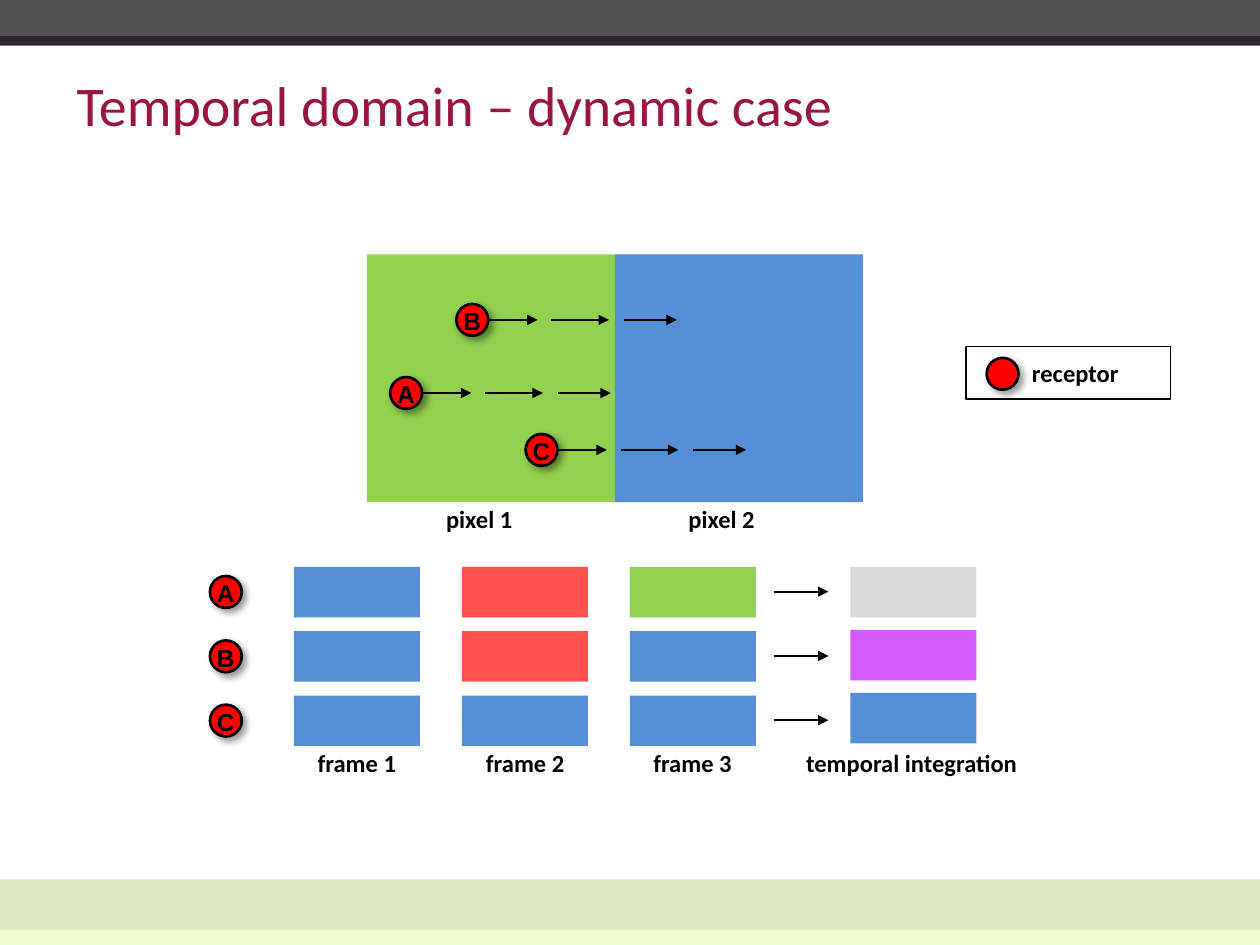
from lxml.etree import SubElement
from pptx import Presentation
from pptx.dml.color import RGBColor
from pptx.enum.shapes import MSO_CONNECTOR, MSO_SHAPE
from pptx.enum.text import MSO_ANCHOR as Anchor, MSO_AUTO_SIZE as AutoSize, PP_ALIGN as Align
from pptx.oxml import parse_xml
from pptx.oxml.ns import nsdecls, qn
from pptx.util import Pt

THEME = {
    "green": "92D050", "blue": "558ED5", "red": "FF5050",
    "grey": "D9D9D9", "violet": "D45BFF",
    "receptor": "FF0000", "ink": "000000", "title": "99173C",
    "top": "515152", "top edge": "2E2633", "base": "DCE9BE", "base edge": "EFFFCD",
    "title size": 32, "label size": 14,
    "text font": "Calibri", "letter font": "Arial",
}

TITLE = "Temporal domain – dynamic case"
LEGEND = "receptor"
BANDS = [("base", 502.5, 31.9), ("base edge", 531.4, 8.6),
         ("top", 0, 20.9), ("top edge", 20.6, 5.5)]  # colour, top, height
PIXELS = [("pixel 1", "green", 252), ("pixel 2", "blue", 390.5)]  # label left
FRAMES = [("frame 1", 178.6), ("frame 2", 274.8), ("frame 3", 370.4)]
RESULT = ("temporal integration", 457.8)
# letter, left and top of its moving receptor, colour per frame, integrated colour
RECEPTORS = [
    ("A", 223, 215.5, ["blue", "red", "green"], "grey"),
    ("B", 260.8, 173.7, ["blue", "red", "blue"], "violet"),
    ("C", 300.4, 248, ["blue", "blue", "blue"], "blue"),
]

SLIDE_W, SLIDE_H = 720, 540
PIXEL_LEFT, PIXEL_TOP, PIXEL_SIDE = 209.7, 145.3, 141.7
PIXEL_LABEL_TOP, FRAME_LABEL_TOP = 288, 427.7
DOT = 18.2
STEPS = [(DOT, 46.4), (54.2, 87.2), (95.8, 126)]  # start and end from receptor's left
FRAME_LEFT, FRAME_PITCH, RESULT_LEFT = 168, 96, 486
ROW_TOP, ROW_PITCH, RESULT_PITCH = 324, 36.75, 36
BAR_W, BAR_H = 72, 28.8
ROW_DOT_LEFT, ROW_DOT_DROP = 120, 5.2
ROW_ARROW = (442.2, 473.4)
LABEL_GAP = 2.9

prs = Presentation()
prs.slide_width, prs.slide_height = Pt(SLIDE_W), Pt(SLIDE_H)
slide = prs.slides.add_slide(prs.slide_layouts[6])


def color(name):
    return RGBColor.from_string(THEME[name])


def add_shape(parent, kind, box, fill=None, line_width=None):
    shape = parent.shapes.add_shape(kind, *map(Pt, box))
    shape.shadow.inherit = False
    if fill:
        shape.fill.solid()
        shape.fill.fore_color.rgb = color(fill)
    else:
        shape.fill.background()
    if line_width:
        shape.line.color.rgb = color("ink")
        shape.line.width = Pt(line_width)
    else:
        shape.line.fill.background()
    return shape


def add_bar(box, fill):
    return add_shape(slide, MSO_SHAPE.RECTANGLE, box, fill)


def style_text(paragraph, size, font, ink, bold):
    for run in paragraph.runs:
        run.font.size, run.font.name, run.font.bold = Pt(THEME[size]), THEME[font], bold
        run.font.color.rgb = color(ink)


def add_label(parent, text, box, font="text font", centred=False):
    """Bold label; a centred one is fixed in its box, others grow with their text."""
    label = parent.shapes.add_textbox(*map(Pt, box))
    frame = label.text_frame
    frame.margin_left = frame.margin_top = frame.margin_bottom = 0
    frame.margin_right = Pt(LABEL_GAP)
    frame.word_wrap = centred
    frame.text = text
    paragraph = frame.paragraphs[0]
    paragraph._p.get_or_add_pPr().set("marL", str(Pt(LABEL_GAP)))
    if centred:
        frame.vertical_anchor = Anchor.MIDDLE
        paragraph.alignment = Align.CENTER
    else:
        frame.auto_size = AutoSize.SHAPE_TO_FIT_TEXT
    style_text(paragraph, "label size", font, "ink", True)


def add_arrow(start, end, y, width):
    arrow = slide.shapes.add_connector(
        MSO_CONNECTOR.STRAIGHT, Pt(start), Pt(y), Pt(end), Pt(y))
    arrow.line.color.rgb = color("ink")
    arrow.line.width = Pt(width)
    SubElement(arrow.line._get_or_add_ln(), qn("a:tailEnd"), type="triangle")
    SubElement(arrow._element.spPr, qn("a:effectLst"))


def add_dot(parent, left, top):
    """Red receptor circle with a soft shadow to the lower right."""
    dot = add_shape(parent, MSO_SHAPE.OVAL, (left, top, DOT, DOT), "receptor", 1.5)
    dot._element.spPr.find(qn("a:effectLst")).append(parse_xml(
        f'<a:outerShdw {nsdecls("a")} blurRad="{Pt(4)}" dist="{Pt(3)}" dir="2700000">'
        f'<a:srgbClr val="{THEME["ink"]}"><a:alpha val="40000"/></a:srgbClr></a:outerShdw>'))


def add_receptor(letter, left, top):
    group = slide.shapes.add_group_shape()
    add_dot(group, left, top)
    add_label(group, letter, (left + 2.5, top + 1, 13, 17.3), "letter font", centred=True)


for fill, top, height in BANDS:
    add_bar((0, top, SLIDE_W, height), fill)

title = slide.shapes.add_textbox(Pt(36.7), Pt(37.4), Pt(648), Pt(44))
title.text_frame.word_wrap = True
title.text_frame.vertical_anchor = Anchor.MIDDLE
title.text_frame.text = TITLE
style_text(title.text_frame.paragraphs[0], "title size", "text font", "title", False)

for column, (name, fill, label_left) in enumerate(PIXELS):
    add_bar((PIXEL_LEFT + column * PIXEL_SIDE, PIXEL_TOP, PIXEL_SIDE, PIXEL_SIDE), fill)
    add_label(slide, name, (label_left, PIXEL_LABEL_TOP, 44.6, 17.3))

for row, (letter, left, top, frame_fills, result_fill) in enumerate(RECEPTORS):
    for start, end in STEPS:
        add_arrow(left + start, left + end, top + DOT / 2, 0.75)
    add_receptor(letter, left, top)

    row_top = ROW_TOP + row * ROW_PITCH
    add_receptor(letter, ROW_DOT_LEFT, row_top + ROW_DOT_DROP)
    for column, fill in enumerate(frame_fills):
        add_bar((FRAME_LEFT + column * FRAME_PITCH, row_top, BAR_W, BAR_H), fill)
    add_arrow(*ROW_ARROW, row_top + BAR_H / 2 - 0.3, 1)
    add_bar((RESULT_LEFT, ROW_TOP + row * RESULT_PITCH, BAR_W, BAR_H), result_fill)

for name, left in FRAMES:
    add_label(slide, name, (left, FRAME_LABEL_TOP, 51, 17.3))
add_label(slide, RESULT[0], (RESULT[1], FRAME_LABEL_TOP, 128, 17.3))

legend = slide.shapes.add_group_shape()
add_dot(legend, 563.8, 204.5)
add_label(legend, LEGEND, (586.8, 204.5, 56.2, 17.3))
add_shape(legend, MSO_SHAPE.RECTANGLE, (552, 198, 116.9, 30), line_width=0.75)

prs.save("out.pptx")
